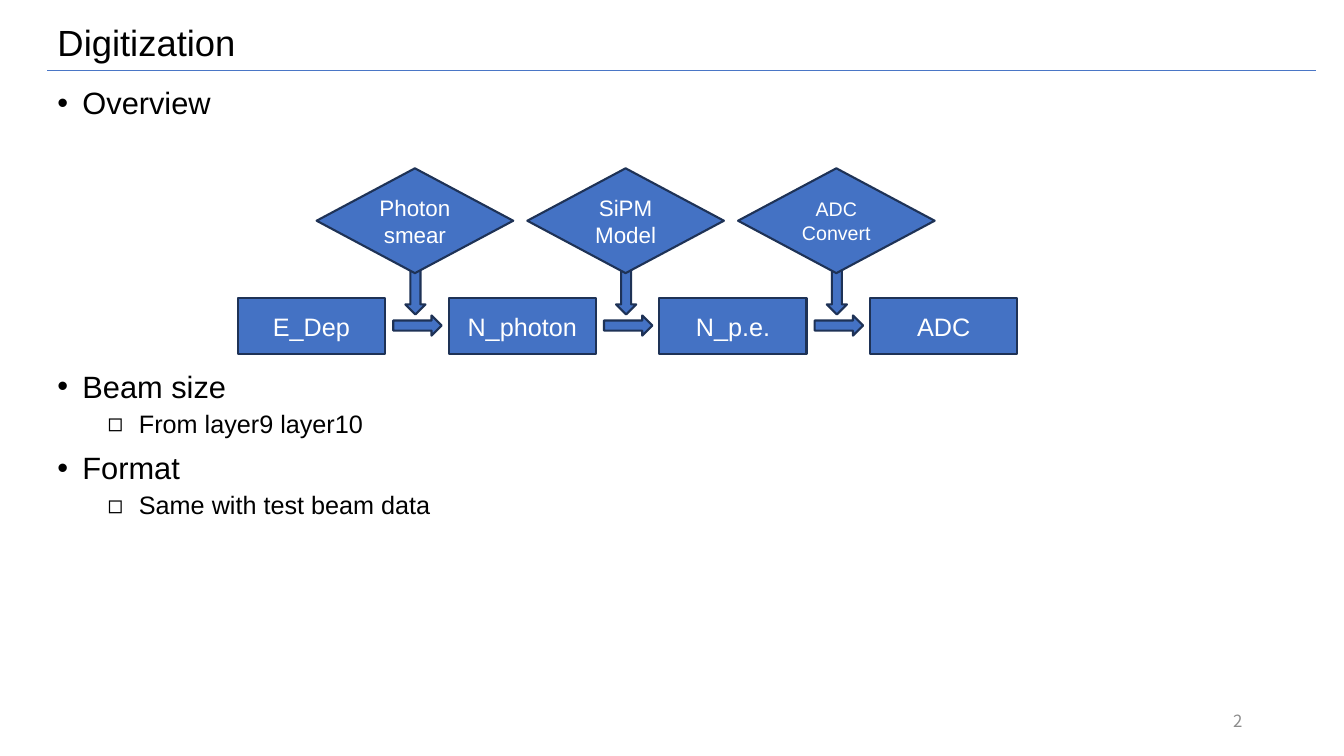
import lxml.etree
import pptx
import pptx.dml.color
import pptx.enum.shapes
import pptx.enum.text
import pptx.oxml.ns
import pptx.util

Inches, Pt = pptx.util.Inches, pptx.util.Pt
SHAPE = pptx.enum.shapes.MSO_SHAPE
ALIGN = pptx.enum.text.PP_ALIGN
MIDDLE = pptx.enum.text.MSO_ANCHOR.MIDDLE
qn = pptx.oxml.ns.qn

COLORS = {"text": "000000", "rule": "4A76C6", "fill": "4472C4",
          "edge": "1E3256", "label": "FFFFFF", "number": "8C8C8C"}
LEFT = 0.47     # left margin of title, rule and bullets
STEP = 2.09     # distance between neighbouring stages

STAGES = ["E_Dep", "N_photon", "N_p.e.", "ADC"]
PROCESSES = [(["Photon smear"], 16), (["SiPM", "Model"], 16),
             (["ADC", "Convert"], 14)]
# level, text, space before (the second topic clears the flow chart)
BULLETS = [(0, "Overview", 0), (0, "Beam size", 179),
           (1, "From layer9 layer10", 5), (0, "Format", 10),
           (1, "Same with test beam data", 5)]
# marker, size, left margin, hanging indent
LEVELS = [("•", 22, 0.25, 0.25), ("◻", 18, 0.81, 0.31)]


def color(name):
    return pptx.dml.color.RGBColor.from_string(COLORS[name])


def add_run(p, text, size, tone, font="Arial"):
    r = p.add_run()
    r.text = text
    r.font.size, r.font.name = Pt(size), font
    r.font.color.rgb = color(tone)


def add_textbox(s, *box):
    tf = s.shapes.add_textbox(*map(Inches, box)).text_frame
    tf.word_wrap = True
    return tf


def next_paragraph(tf, i):
    return tf.add_paragraph() if i else tf.paragraphs[0]


def set_title(s, text):
    sp = s.shapes.title
    sp.left, sp.top, sp.width, sp.height = map(Inches, (LEFT, 0.07, 11.12, 0.74))
    tf = sp.text_frame
    tf.vertical_anchor = MIDDLE
    p = tf.paragraphs[0]
    p.alignment, p.line_spacing = ALIGN.LEFT, 0.9
    add_run(p, text, 26, "text")


def add_rule(s):
    line = s.shapes.add_connector(pptx.enum.shapes.MSO_CONNECTOR.STRAIGHT,
                                  *map(Inches, (LEFT, 0.7, 13.05, 0.7)))
    line.line.color.rgb, line.line.width = color("rule"), Pt(1)
    lxml.etree.SubElement(line._element.spPr, qn("a:effectLst"))


def add_bullets(s):
    tf = add_textbox(s, LEFT, 0.82, 11.5, 6.22)
    for i, (level, text, before) in enumerate(BULLETS):
        marker, size, margin, hang = LEVELS[level]
        p = next_paragraph(tf, i)
        p.level, p.line_spacing, p.space_before = level, 0.9, Pt(before)
        pPr = p._p.get_or_add_pPr()
        pPr.set("marL", str(Inches(margin)))
        pPr.set("indent", str(-Inches(hang)))
        lxml.etree.SubElement(pPr, qn("a:buFont"), typeface="Arial")
        lxml.etree.SubElement(pPr, qn("a:buChar"), char=marker)
        add_run(p, text, size, "text")


def add_block(s, kind, box, lines=(), size=18):
    sp = s.shapes.add_shape(kind, *map(Inches, box))
    sp.shadow.inherit = False
    sp.fill.solid()
    sp.fill.fore_color.rgb = color("fill")
    sp.line.color.rgb, sp.line.width = color("edge"), Pt(1.5)
    tf = sp.text_frame
    tf.word_wrap, tf.vertical_anchor = True, MIDDLE
    for i, text in enumerate(lines):
        p = next_paragraph(tf, i)
        p.alignment = ALIGN.CENTER
        add_run(p, text, size, "label")
    return sp


def add_flow(s):
    for i, stage in enumerate(STAGES):
        add_block(s, SHAPE.RECTANGLE, (2.36 + i * STEP, 2.96, 1.46, 0.55), [stage])
    for i, (lines, size) in enumerate(PROCESSES):
        x = i * STEP
        add_block(s, SHAPE.RIGHT_ARROW, (3.9 + x, 3.13, 0.48, 0.2))
        down = add_block(s, SHAPE.RIGHT_ARROW, (3.88 + x, 2.78, 0.48, 0.2))
        down.rotation = 90
        add_block(s, SHAPE.DIAMOND, (3.14 + x, 1.67, 1.95, 1.04), lines, size)


def add_slide_number(s, number):
    tf = add_textbox(s, 9.42, 6.95, 3, 0.4)
    tf.vertical_anchor = MIDDLE
    p = tf.paragraphs[0]
    p.alignment = ALIGN.RIGHT
    add_run(p, number, 12, "number", "Noto Sans CJK SC")


def main():
    prs = pptx.Presentation()
    prs.slide_width, prs.slide_height = Inches(13.33), Inches(7.5)
    s = prs.slides.add_slide(prs.slide_layouts.get_by_name("Title Only"))
    add_rule(s)
    add_bullets(s)
    set_title(s, "Digitization")
    add_slide_number(s, "2")
    add_flow(s)
    prs.save("out.pptx")


if __name__ == "__main__":
    main()
